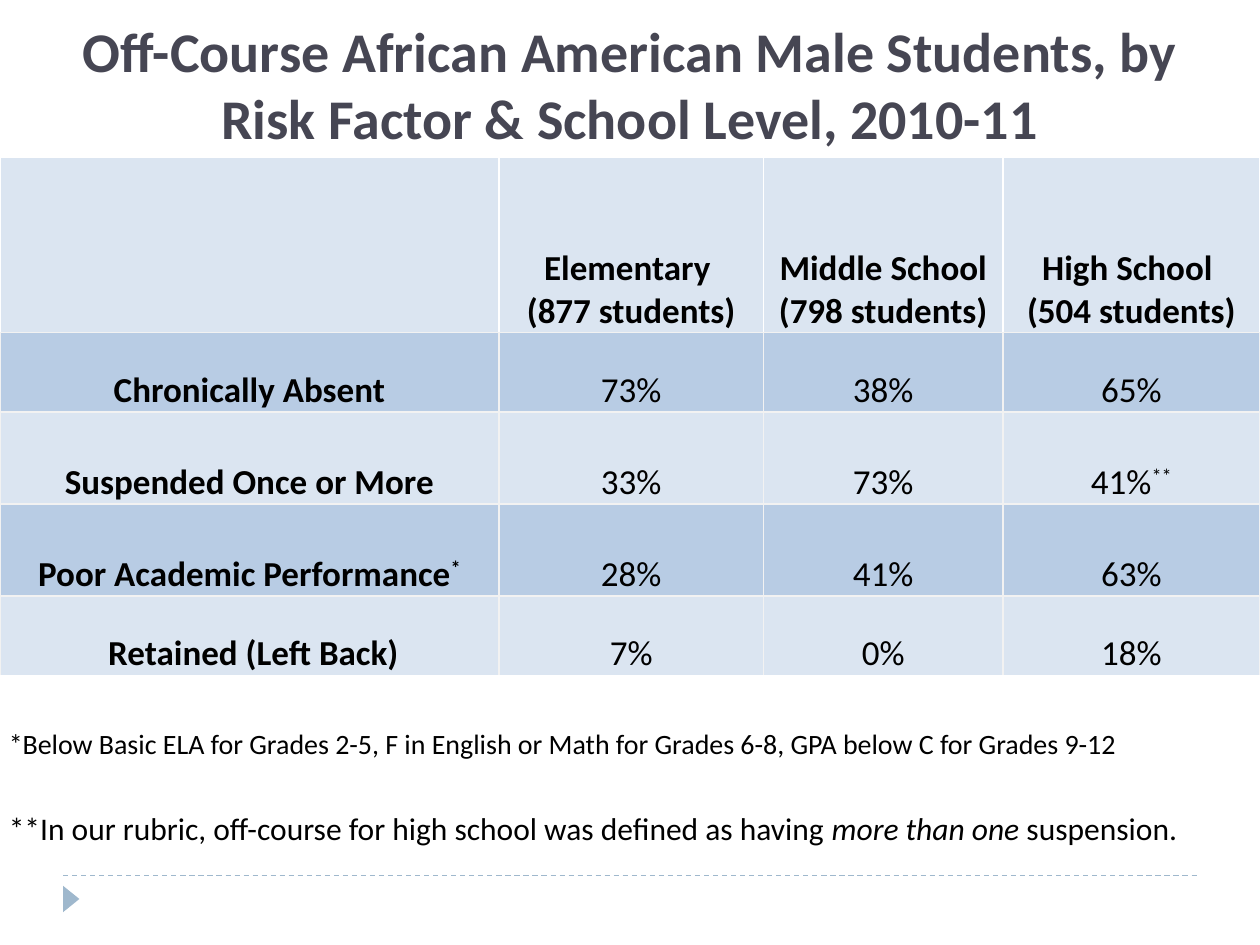
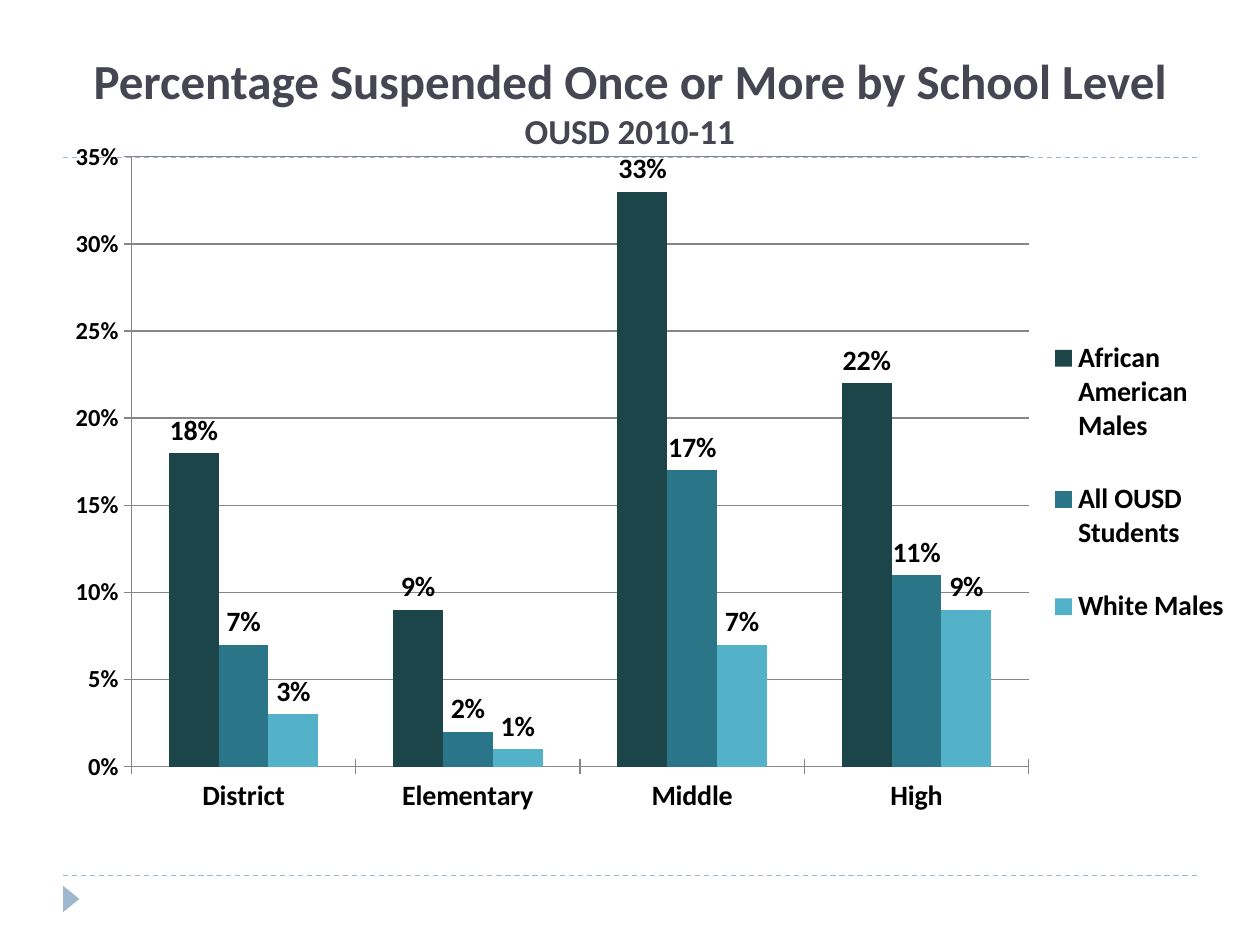
"""Build two slides on school risk factors: a table and a column chart."""
from dataclasses import dataclass
from typing import Any

import lxml.etree
import pptx
import pptx.chart.data
import pptx.dml.color
import pptx.enum.chart
import pptx.enum.dml
import pptx.enum.shapes
import pptx.enum.text
import pptx.oxml.ns
import pptx.util

COLS = 100
WIDE, HIGH = pptx.util.Inches(10), pptx.util.Inches(7.5)
FACE = "Calibri"
INK, SLATE, SKY = "000000", "464653", "9FB8CD"
WHITE, SMOKE, GREY = "FFFFFF", "F2F2F2", "868686"
PALE, BLUE = "DBE5F1", "B8CCE4"
CENTER = pptx.enum.text.PP_ALIGN.CENTER
LEFT = pptx.enum.text.PP_ALIGN.LEFT


@dataclass(frozen=True)
class Box:
    left: float
    top: float
    width: float
    height: float

    def place(self) -> tuple[int, ...]:
        return tuple(map(grid, (self.left, self.top, self.width, self.height)))


@dataclass(frozen=True)
class Bit:
    text: str
    size: float | None = None
    slant: bool = False
    raised: bool = False


@dataclass(frozen=True)
class Style:
    size: float
    bold: bool = False
    color: str = INK
    align: Any = CENTER


@dataclass(frozen=True)
class Row:
    height: float
    fill: str
    edge: str
    cells: tuple[list[list[Bit]], ...]
    bold: bool = False
    note: float = 0


@dataclass(frozen=True)
class Group:
    name: str
    color: str
    rates: tuple[float, ...]


def line(*texts: str) -> list[list[Bit]]:
    return [[Bit(text)] for text in texts]


def plain(*texts: str) -> tuple[list[list[Bit]], ...]:
    return tuple(line(text) for text in texts)


HEAD = Box(5, 1.7, 90, 10.8)
RULES = (69.5, 12.5)
MARK = Box(4.6, 70.7, 2.1, 1.3)
TABLE = Box(0, 12.5, 100, 55)
SPANS = (39.6, 21, 19, 20.4)
ROWS = (
    Row(13.9, PALE, WHITE, ([], line("Elementary ", "(877 students)"),
                            line("Middle School (798 students)"),
                            line("High School ", "(504 students)")), bold=True),
    Row(6.3, BLUE, SMOKE, plain("Chronically Absent", "73%", "38%", "65%")),
    Row(7.3, PALE, SMOKE, plain("Suspended Once or More", "33%", "73%")
        + ([[Bit("41%"), Bit("**", raised=True)]],)),
    Row(7.3, BLUE, SMOKE, ([[Bit("Poor Academic Performance"), Bit("*", raised=True)]],)
        + plain("28%", "41%", "63%")),
    Row(6.3, PALE, SMOKE, plain(" Retained (Left Back)", "7%", "0%", "18%")),
    Row(6.9, WHITE, WHITE, plain(
        "*Below Basic ELA for Grades 2-5, F in English or Math for Grades 6-8, "
        "GPA below C for Grades 9-12"), note=16),
    Row(6.9, WHITE, WHITE, ([[
        Bit("**In our rubric, off-course for high school was defined as having "),
        Bit("more than one", slant=True), Bit(" suspension.")]],), note=18),
)
CHART = Box(5.8, 10.8, 92.5, 55)
PLOT = Box(0.05, 0.03, 0.77, 0.88)
KEY = Box(0.83, 0.24, 0.17, 0.52)
LEVELS = ("District", "Elementary", "Middle", "High")
GROUPS = (
    Group("African American Males", "1B4549", (0.18, 0.09, 0.33, 0.22)),
    Group("All OUSD Students", "2B7589", (0.07, 0.02, 0.17, 0.11)),
    Group("White Males", "54B2C8", (0.03, 0.01, 0.07, 0.09)),
)


def grid(count: float) -> int:
    return round(WIDE * count / COLS)


def tint(color: str) -> pptx.dml.color.RGBColor:
    return pptx.dml.color.RGBColor.from_string(color)


def paint(fill: Any, color: str) -> None:
    fill.solid()
    fill.fore_color.rgb = tint(color)


def dress(font: Any, style: Style) -> None:
    font.name, font.size = FACE, pptx.util.Pt(style.size)
    font.bold, font.color.rgb = style.bold, tint(style.color)


def write(frame: Any, lines: list[list[Bit]], style: Style) -> None:
    for index, bits in enumerate(lines):
        para = frame.add_paragraph() if index else frame.paragraphs[0]
        para.alignment = style.align
        dress(para.font, style)
        for bit in bits:
            if bit.text == "\v":
                para.add_line_break()
                continue
            run = para.add_run()
            run.text = bit.text
            if bit.size:
                run.font.size = pptx.util.Pt(bit.size)
            if bit.slant:
                run.font.italic = True
            if bit.raised:
                run.font._element.set("baseline", "30000")


def start(deck: Any, bits: list[Bit], size: float) -> Any:
    slide = deck.slides.add_slide(deck.slide_layouts[5])
    paint(slide.background.fill, WHITE)
    for row in RULES:
        rule = slide.shapes.add_connector(
            pptx.enum.shapes.MSO_CONNECTOR.STRAIGHT,
            *map(grid, (HEAD.left, row, HEAD.left + HEAD.width, row)))
        rule.line.color.rgb = tint(SKY)
        rule.line.width = pptx.util.Pt(0.75)
        rule.line.dash_style = pptx.enum.dml.MSO_LINE.DASH
        lxml.etree.SubElement(rule._element.spPr, pptx.oxml.ns.qn("a:effectLst"))
    mark = slide.shapes.add_shape(
        pptx.enum.shapes.MSO_SHAPE.ISOSCELES_TRIANGLE, *MARK.place())
    mark.rotation = 90
    mark.shadow.inherit = False
    paint(mark.fill, SKY)
    mark.line.fill.background()
    title = slide.shapes.title
    title.left, title.top, title.width, title.height = HEAD.place()
    frame = title.text_frame
    frame.auto_size = pptx.enum.text.MSO_AUTO_SIZE.NONE
    frame.vertical_anchor = pptx.enum.text.MSO_ANCHOR.BOTTOM
    write(frame, [bits], Style(size, True, SLATE))
    return slide


def border(cell: Any, color: str) -> None:
    props = cell._tc.get_or_add_tcPr()
    for index, side in enumerate("LRTB"):
        edge = lxml.etree.Element(pptx.oxml.ns.qn(f"a:ln{side}"), w="12700")
        solid = lxml.etree.SubElement(edge, pptx.oxml.ns.qn("a:solidFill"))
        lxml.etree.SubElement(solid, pptx.oxml.ns.qn("a:srgbClr"), val=color)
        props.insert(index, edge)


def tabulate(slide: Any) -> None:
    table = slide.shapes.add_table(len(ROWS), len(SPANS), *TABLE.place()).table
    table.first_row = table.horz_banding = False
    for column, span in zip(table.columns, SPANS):
        column.width = grid(span)
    for index, row in enumerate(ROWS):
        table.rows[index].height = grid(row.height)
        for cell in table.rows[index].cells:
            paint(cell.fill, row.fill)
            border(cell, row.edge)
            cell.margin_left = cell.margin_right = pptx.util.Inches(0.07)
            cell.margin_top = cell.margin_bottom = 0
            cell.vertical_anchor = pptx.enum.text.MSO_ANCHOR.BOTTOM
        if row.note:
            table.cell(index, 0).merge(table.cell(index, len(SPANS) - 1))
        for place, lines in enumerate(row.cells):
            style = (Style(row.note, align=LEFT) if row.note
                     else Style(20, row.bold or place == 0))
            write(table.cell(index, place).text_frame, lines, style)


def arrange(parent: Any, index: int, box: Box, inner: bool = False) -> None:
    for old in parent.findall(pptx.oxml.ns.qn("c:layout")):
        parent.remove(old)
    layout = lxml.etree.Element(pptx.oxml.ns.qn("c:layout"))
    manual = lxml.etree.SubElement(layout, pptx.oxml.ns.qn("c:manualLayout"))
    parts = [("layoutTarget", "inner")] if inner else []
    parts += [("xMode", "edge"), ("yMode", "edge"), ("x", box.left),
              ("y", box.top), ("w", box.width), ("h", box.height)]
    for tag, value in parts:
        lxml.etree.SubElement(manual, pptx.oxml.ns.qn(f"c:{tag}"), val=str(value))
    parent.insert(index, layout)


def plot(slide: Any) -> None:
    data = pptx.chart.data.CategoryChartData(number_format="0%")
    data.categories = LEVELS
    for group in GROUPS:
        data.add_series(group.name, group.rates)
    chart = slide.shapes.add_chart(
        pptx.enum.chart.XL_CHART_TYPE.COLUMN_CLUSTERED, *CHART.place(), data).chart
    dress(chart.font, Style(14))
    chart.has_title = False
    bars = chart.plots[0]
    bars.vary_by_categories = False
    bars.gap_width, bars.overlap = 150, 0
    for series, group in zip(bars.series, GROUPS):
        paint(series.format.fill, group.color)
        labels = series.data_labels
        labels.show_value = True
        labels.number_format, labels.number_format_is_linked = "0%", False
        labels.position = pptx.enum.chart.XL_LABEL_POSITION.OUTSIDE_END
        dress(labels.font, Style(16, True))
    rates = chart.value_axis
    rates.minimum_scale, rates.maximum_scale, rates.major_unit = 0, 0.35, 0.05
    rates.has_major_gridlines = True
    for axis, size in ((chart.category_axis, 16), (rates, 14)):
        axis.major_tick_mark = pptx.enum.chart.XL_TICK_MARK.CROSS
        dress(axis.tick_labels.font, Style(size, True))
    rates.tick_labels.number_format = "0%"
    rates.tick_labels.number_format_is_linked = False
    for part in (chart.category_axis, rates, rates.major_gridlines):
        part.format.line.color.rgb = tint(GREY)
        part.format.line.width = pptx.util.Pt(0.75)
    chart.has_legend = True
    legend = chart.legend
    legend.position = pptx.enum.chart.XL_LEGEND_POSITION.RIGHT
    legend.include_in_layout = False
    dress(legend.font, Style(16, True))
    arrange(chart._chartSpace.chart.plotArea, 0, PLOT, True)
    arrange(legend._element, 1, KEY)


def main() -> None:
    deck = pptx.Presentation()
    deck.slide_width, deck.slide_height = WIDE, HIGH
    tabulate(start(deck, [Bit("Off-Course African American Male Students, by "
                              "Risk Factor & School Level, 2010-11")], 32))
    plot(start(deck, [Bit("Percentage Suspended Once or More by School Level"),
                      Bit("\v"), Bit("OUSD 2010-11", size=20)], 28))
    deck.save("out.pptx")


if __name__ == "__main__":
    main()
